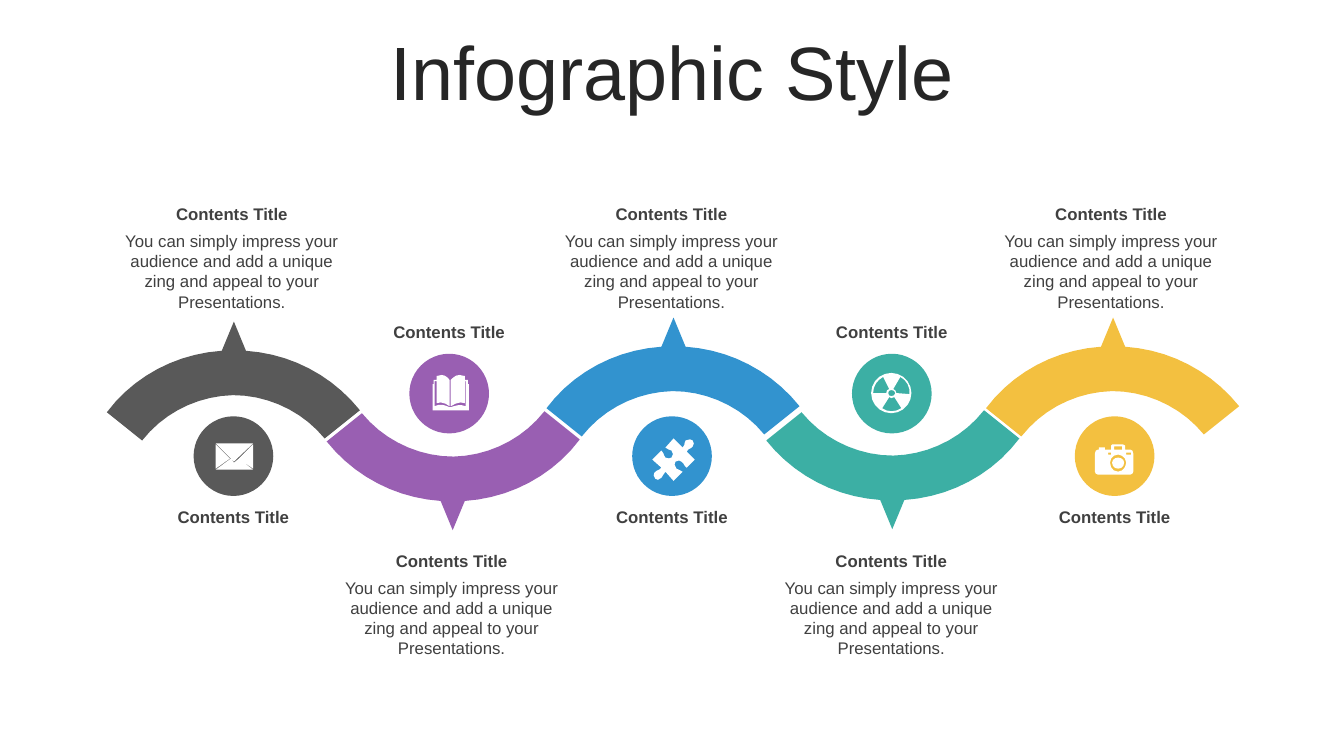
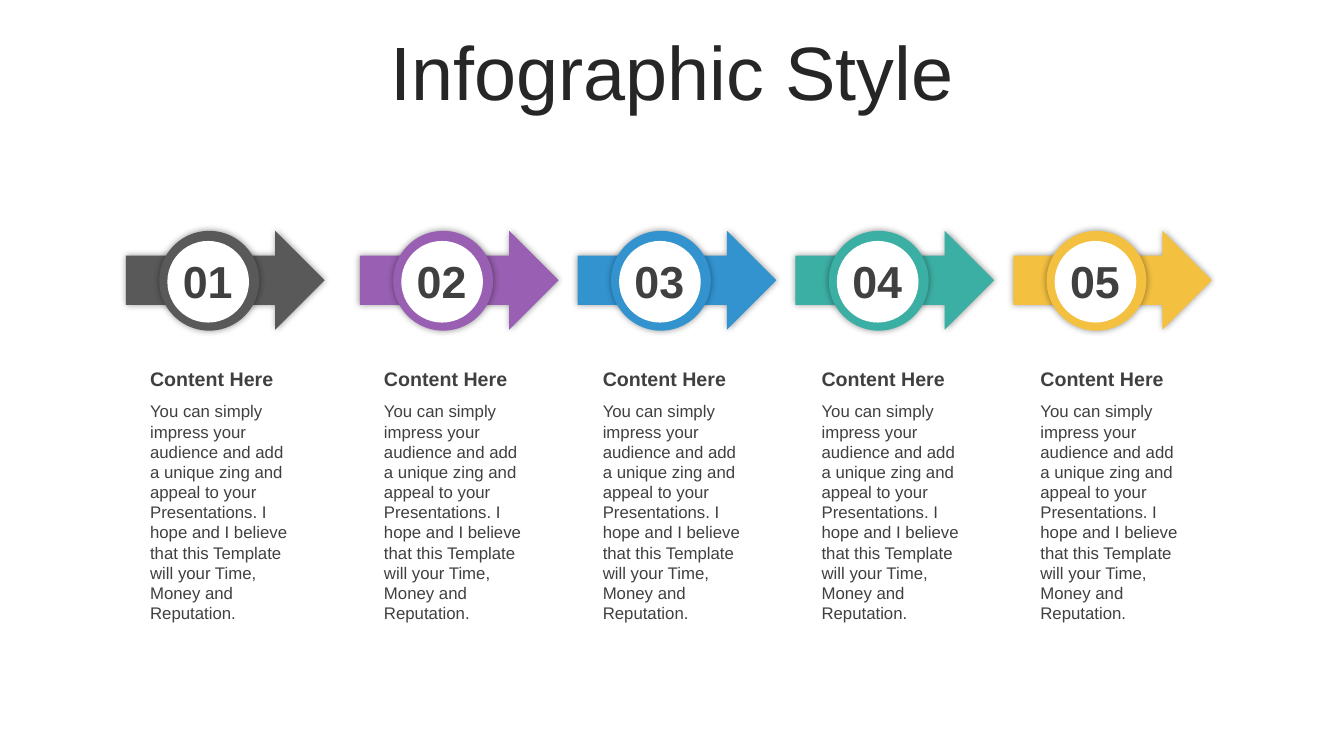
from dataclasses import dataclass
from math import dist, sqrt

from lxml.etree import SubElement
from pptx import Presentation
from pptx.dml.color import RGBColor
from pptx.enum.shapes import MSO_SHAPE
from pptx.enum.text import MSO_ANCHOR, PP_ALIGN
from pptx.oxml.ns import qn
from pptx.util import Inches, Pt

SLIDE_W, SLIDE_H = 13.33, 7.5


@dataclass(frozen=True)
class Theme:
    font: str = "Arial"
    title_ink: str = "262626"
    ink: str = "404040"
    white: str = "FFFFFF"
    accents: tuple = ("595959", "995FB2", "3293CF", "3CAFA4", "F3C040")
    title_size: float = 54
    number_size: float = 32
    heading_size: float = 14
    body_size: float = 12


THEME = Theme()


@dataclass(frozen=True)
class Stage:
    arch_top: float
    badge_left: float
    icon_offset: tuple  # from the badge's top left corner
    icon: str


# Outlines in hundredths of an inch: M move, L lines, C curves, Z close
ARCH_W, ARCH_H = 2.51, 1.18
ARCH = ("M 126 0 L 138 29 C 182 32 223 53 251 88 L 216 116 C 194 89 160 73 125 73 "
        "C 90 74 57 90 35 118 L 0 90 C 27 54 69 32 114 29 Z")
ENVELOPE = ("M 23 15 L 37 26 0 26 15 15 18 19 Z M 37 1 L 37 25 23 15 Z "
            "M 0 1 L 14 15 0 25 Z M 0 0 L 37 0 18 18 Z")
BOOK = ("M 17 32 L 18 32 C 24 30 27 29 33 31 L 33 6 32 6 32 28 C 28 26 23 28 18 31 "
        "L 18 5 C 21 2 23 0 27 0 C 28 0 30 1 32 1 L 32 5 35 5 35 9 36 9 36 35 0 35 "
        "0 9 1 9 1 5 4 5 4 1 C 6 1 8 0 9 0 C 12 0 15 2 17 5 L 17 31 "
        "C 13 28 8 26 4 28 L 4 6 2 6 2 31 C 8 28 12 30 17 32 Z")
PUZZLE = ("M 40 2 C 41 4 42 6 40 8 C 38 11 36 9 34 13 L 42 21 34 29 "
          "C 31 27 32 25 29 23 C 28 21 25 22 23 23 C 22 24 21 27 24 30 "
          "C 26 32 27 30 30 33 L 21 42 13 33 C 10 36 11 37 9 39 C 7 42 4 41 3 40 "
          "C 1 38 1 35 2 34 C 4 31 7 32 9 29 L 0 21 9 12 C 12 15 11 17 13 19 "
          "C 15 20 18 20 19 19 C 21 17 21 14 19 12 C 16 10 16 12 13 9 L 21 0 30 9 "
          "C 33 6 31 5 33 2 C 36 0 39 1 40 2 Z")
RADIATION = ("M 18 24 L 11 35 C 16 39 24 39 30 35 L 23 24 C 22 24 21 25 20 25 "
             "C 19 25 18 24 18 24 Z M 20 17 C 18 17 17 18 17 20 C 17 22 18 23 20 23 "
             "C 22 23 24 22 24 20 C 24 18 22 17 20 17 Z M 29 4 L 22 16 "
             "C 24 17 25 18 25 20 L 38 21 C 39 14 35 7 29 4 Z M 12 4 "
             "C 6 7 2 13 2 20 L 15 20 C 15 18 16 16 18 16 Z M 20 0 "
             "C 31 0 40 9 40 20 C 40 31 31 40 20 40 C 9 40 0 31 0 20 C 0 9 9 0 20 0 Z")
CAMERA = ("M 23 13 C 26 13 29 15 29 18 C 29 22 26 24 23 24 C 20 24 17 22 17 18 "
          "C 17 15 20 13 23 13 Z M 23 10 C 18 10 15 14 15 18 C 15 23 18 27 23 27 "
          "C 27 27 31 23 31 18 C 31 14 27 10 23 10 Z M 13 8 L 13 10 16 10 16 8 Z "
          "M 31 8 L 31 10 36 10 36 8 Z M 19 2 L 19 5 27 5 27 2 Z M 17 0 L 28 0 "
          "30 1 30 5 35 5 C 37 5 38 7 38 9 L 38 27 C 38 28 37 30 35 30 "
          "L 3 30 C 1 30 0 28 0 27 L 0 9 C 0 7 1 5 3 5 L 4 5 4 3 10 3 10 5 16 5 16 1 Z")

# Content
TITLE = "Infographic Style"
PITCH = "You can simply impress your audience and add a unique zing and appeal to your Presentations."
LONG_PITCH = PITCH + " I hope and I believe that this Template will your Time, Money and Reputation."
STAGES = (
    Stage(3.19, 1.92, (0.22, 0.27), ENVELOPE),
    Stage(4.08, 4.06, (0.23, 0.21), BOOK),
    Stage(3.15, 6.27, (0.20, 0.22), PUZZLE),
    Stage(4.07, 8.45, (0.19, 0.19), RADIATION),
    Stage(3.15, 10.66, (0.20, 0.28), CAMERA),
)

# Grid of the wave: one column per stage; rows for an upward and a downward arch
WAVE_LEFT, WAVE_PITCH = 1.06, 2.18
UP_ROWS = {"text": 1.97, "badge": 4.13, "label": 4.98}
DOWN_ROWS = {"text": 5.41, "badge": 3.51, "label": 3.14}
BADGE, LABEL_W = 0.79, 1.42

# Grid of the arrows: the first column is a little wider than the rest
ARROW_TOP, TEXT_TOP = 2.29, 3.59


def rgb(code):
    return RGBColor.from_string(code)


def paint(shape, color):
    shape.shadow.inherit = False
    shape.fill.solid()
    shape.fill.fore_color.rgb = rgb(color)
    shape.line.fill.background()
    return shape


def add_preset(slide, preset, left, top, width, height, color):
    box = [Inches(v) for v in (left, top, width, height)]
    return paint(slide.shapes.add_shape(preset, *box), color)


def add_glow(shape):
    """Soft black shadow all round the shape."""
    effects = shape._element.spPr.find(qn("a:effectLst"))
    shadow = SubElement(effects, qn("a:outerShdw"), blurRad=str(Pt(5)), dist="0",
                        algn="ctr", rotWithShape="0")
    black = SubElement(shadow, qn("a:srgbClr"), val="000000")
    SubElement(black, qn("a:alpha"), val="40000")


def add_text(slide, text, left, top, width, height, size=THEME.body_size, bold=False,
             color=THEME.ink, align=PP_ALIGN.CENTER, middle=False, inset=None):
    frame = slide.shapes.add_textbox(*[Inches(v) for v in (left, top, width, height)]).text_frame
    frame.word_wrap = True
    if middle:
        frame.vertical_anchor = MSO_ANCHOR.MIDDLE
    if inset is not None:
        frame.margin_left = frame.margin_right = Inches(inset)
        frame.margin_top = frame.margin_bottom = Inches(inset)
    paragraph = frame.paragraphs[0]
    paragraph.text = text
    paragraph.alignment = align
    font = paragraph.font
    font.name, font.size, font.bold = THEME.font, Pt(size), bold
    font.color.rgb = rgb(color)
    return paragraph


def curve_points(start, bend1, bend2, end):
    """Points along a cubic curve, without its start; longer curves get more."""
    steps = max(1, round(sqrt(dist(start, end) / 0.012)))
    for t in (n / steps for n in range(1, steps + 1)):
        s = 1 - t
        yield tuple(s**3 * a + 3 * s * s * t * b + 3 * s * t * t * c + t**3 * d
                    for a, b, c, d in zip(start, bend1, bend2, end))


def contours(outline):
    """Turn an outline into one list of points per closed contour."""
    result, command, numbers = [], "", []
    for token in outline.split():
        if token.isalpha():
            command = token
            continue
        numbers.append(int(token) / 100)
        if len(numbers) < (6 if command == "C" else 2):
            continue
        pairs = list(zip(numbers[::2], numbers[1::2]))
        numbers = []
        if command == "M":
            result.append(pairs)
        elif command == "L":
            result[-1] += pairs
        else:
            result[-1].extend(curve_points(result[-1][-1], *pairs))
    return result


def add_outline(slide, outline, left, top, color, turned_size=None):
    """Draw an outline; turned_size gives its size when it is turned upside down."""
    def place(point):
        x, y = point
        if turned_size:
            x, y = turned_size[0] - x, turned_size[1] - y
        return Inches(left + x), Inches(top + y)

    builder = None
    for contour in contours(outline):
        first, *rest = map(place, contour)
        if builder is None:
            builder = slide.shapes.build_freeform(*first, scale=1.0)
        else:
            builder.move_to(*first)
        builder.add_line_segments(rest, close=True)
    return paint(builder.convert_to_shape(), color)


def add_titled_slide(prs):
    slide = prs.slides.add_slide(prs.slide_layouts[6])
    title = add_text(slide, TITLE, 0.03 * SLIDE_W, 0.05 * SLIDE_H, 0.94 * SLIDE_W,
                     0.1 * SLIDE_H, THEME.title_size, color=THEME.title_ink, middle=True)
    title.line_spacing = 0.9
    title.space_before = Pt(10)
    return slide


def add_stage(slide, index, stage):
    color = THEME.accents[index]
    down = index % 2 == 1
    rows = DOWN_ROWS if down else UP_ROWS
    arch_left = WAVE_LEFT + index * WAVE_PITCH

    # Arch with its pointer
    add_outline(slide, ARCH, arch_left, stage.arch_top, color,
                (ARCH_W, ARCH_H) if down else None)

    # Badge, icon and label
    add_preset(slide, MSO_SHAPE.OVAL, stage.badge_left, rows["badge"], BADGE, BADGE, color)
    dx, dy = stage.icon_offset
    add_outline(slide, stage.icon, stage.badge_left + dx, rows["badge"] + dy, THEME.white)
    add_text(slide, "Contents Title", stage.badge_left - (LABEL_W - BADGE) / 2,
             rows["label"], LABEL_W, 0.3, bold=True)

    # Text at the pointer
    text_left = arch_left + 0.02
    add_text(slide, "Contents Title", text_left, rows["text"], 2.44, 0.3, bold=True)
    add_text(slide, PITCH, text_left, rows["text"] + 0.27, 2.44, 0.91)


def column_left(index, first, second, pitch):
    return first if index == 0 else second + (index - 1) * pitch


def add_step(slide, index, color):
    # Arrow, ring and number
    left = column_left(index, 1.25, 3.57, 2.16)
    add_glow(add_preset(slide, MSO_SHAPE.RIGHT_ARROW, left, ARROW_TOP, 1.97, 0.98, color))
    add_glow(add_preset(slide, MSO_SHAPE.OVAL, left + 0.33, ARROW_TOP, 0.99, 0.99, color))
    add_preset(slide, MSO_SHAPE.OVAL, left + 0.41, ARROW_TOP + 0.1, 0.81, 0.81, THEME.white)
    number = add_text(slide, f"{index + 1:02}", left + 0.5, ARROW_TOP + 0.26, 0.62, 0.46,
                      THEME.number_size, bold=True, middle=True, inset=0)
    number.space_before = Pt(0.2 * THEME.number_size)

    # Heading and text
    text_left = column_left(index, 1.39, 3.71, 2.17)
    add_text(slide, "Content Here", text_left, TEXT_TOP, 1.58, 0.34,
             THEME.heading_size, bold=True, align=PP_ALIGN.LEFT)
    add_text(slide, LONG_PITCH, text_left, TEXT_TOP + 0.34, 1.58, 2.32, align=PP_ALIGN.LEFT)


def main():
    prs = Presentation()
    prs.slide_width, prs.slide_height = Inches(SLIDE_W), Inches(SLIDE_H)

    wave_slide = add_titled_slide(prs)
    for index, stage in enumerate(STAGES):
        add_stage(wave_slide, index, stage)

    arrow_slide = add_titled_slide(prs)
    for index, color in enumerate(THEME.accents):
        add_step(arrow_slide, index, color)

    prs.save("out.pptx")


if __name__ == "__main__":
    main()
